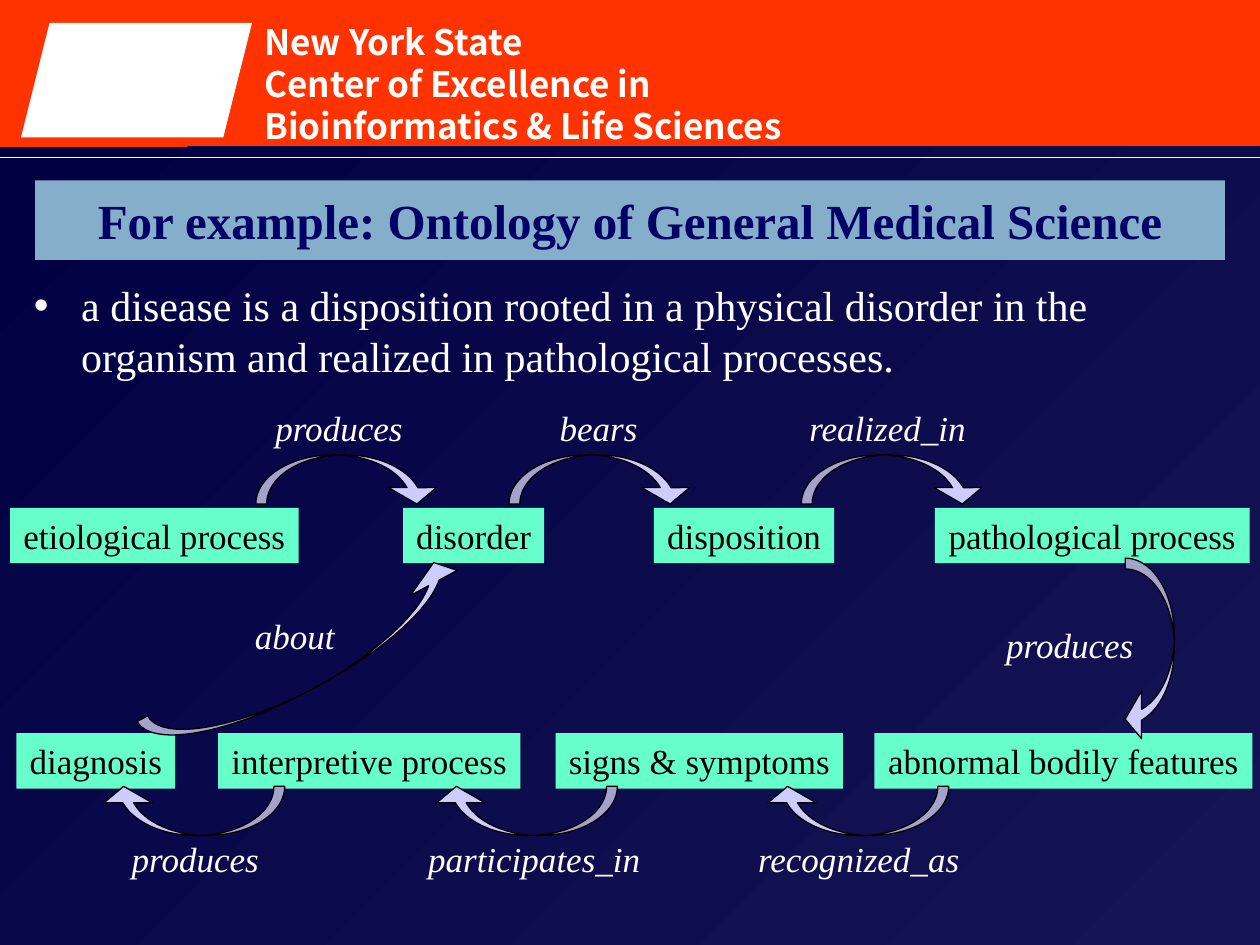
from lxml import etree
from pptx import Presentation
from pptx.dml.color import RGBColor
from pptx.enum import shapes, text
from pptx.oxml import ns
from pptx.util import Pt

RED = RGBColor(0xFF, 0x33, 0x00)
NIGHT = RGBColor(0x00, 0x00, 0x42)
INDIGO = RGBColor(0x15, 0x15, 0x55)
NAVY = RGBColor(0x00, 0x00, 0x66)
STEEL = RGBColor(0x84, 0xAE, 0xCA)
MINT = RGBColor(0x66, 0xFF, 0xCC)
LILAC = RGBColor(0xCC, 0xCC, 0xFF)
WHITE = RGBColor(0xFF, 0xFF, 0xFF)
BLACK = RGBColor(0x00, 0x00, 0x00)
SERIF = "Times New Roman"
SANS = "Noto Sans CJK KR"
KINDS = shapes.MSO_SHAPE
ALIGN = text.PP_ALIGN
ROW_HEIGHT = 31.7
ARROW_SIZE = (105.8, 28.1)


def place(item, box):
    item.left, item.top, item.width, item.height = map(Pt, box)


def write(frame, words, size=20, color=WHITE, font=SERIF, bold=False, italic=False,
          align=ALIGN.CENTER, anchor=text.MSO_ANCHOR.TOP, wrap=False, spacing=None):
    """Fill a text frame, one paragraph for each line of words."""
    frame.text = words
    frame.auto_size = text.MSO_AUTO_SIZE.NONE
    frame.word_wrap = wrap
    frame.vertical_anchor = anchor
    for paragraph in frame.paragraphs:
        paragraph.alignment = align
        if spacing:
            paragraph.line_spacing = Pt(spacing)
        face = paragraph.runs[0].font
        face.name, face.size = font, Pt(size)
        face.bold, face.italic = bold, italic
        face.color.rgb = color


def add_plain(slide, kind, box, fill, line=None):
    plain = slide.shapes.add_shape(kind, *map(Pt, box))
    plain.shadow.inherit = False
    plain.fill.solid()
    plain.fill.fore_color.rgb = fill
    if line is None:
        plain.line.fill.background()
    else:
        plain.line.color.rgb = line
        plain.line.width = Pt(0.75)
    return plain


def add_label(slide, words, box, **style):
    label = slide.shapes.add_textbox(*map(Pt, box))
    write(label.text_frame, words, **style)


def add_backdrop(slide, box):
    """Red page with a dark gradient panel behind everything else."""
    slide.background.fill.solid()
    slide.background.fill.fore_color.rgb = RED
    panel = add_plain(slide, KINDS.RECTANGLE, box, NIGHT)
    panel.fill.gradient()
    panel.fill.gradient_angle = 315
    for stop, color in zip(panel.fill.gradient_stops, (NIGHT, INDIGO)):
        stop.color.rgb = color
    panel.element.getparent().insert(2, panel.element)


def add_header(slide, box):
    left, top, width, height = box
    # Plain emblem, institute name, rule below
    add_plain(slide, KINDS.PARALLELOGRAM, (left + 12, top + 13, 132, 65.5), WHITE)
    add_label(slide, "New York State\nCenter of Excellence in Bioinformatics & Life Sciences",
              (left + 144, top + 8, 330, 80), font=SANS, bold=True,
              align=ALIGN.LEFT, wrap=True, spacing=24)
    rule_y = Pt(top + height)
    rule = slide.shapes.add_connector(shapes.MSO_CONNECTOR.STRAIGHT,
                                      Pt(left), rule_y, Pt(left + width), rule_y)
    rule.line.color.rgb = WHITE
    rule.line.width = Pt(0.75)
    etree.SubElement(rule.element.spPr, ns.qn("a:effectLst"))


def fill_title(slide, box):
    title = slide.shapes.title
    place(title, box)
    title.fill.solid()
    title.fill.fore_color.rgb = STEEL
    write(title.text_frame, "For example: Ontology of General Medical Science", size=28,
          color=NAVY, bold=True, anchor=text.MSO_ANCHOR.MIDDLE, wrap=True)


def fill_definition(slide, box):
    definition = slide.placeholders[1]
    place(definition, box)
    write(definition.text_frame,
          "a disease is a disposition rooted in a physical disorder in the "
          "organism and realized in pathological processes.",
          size=24, align=ALIGN.LEFT, wrap=True)


def add_arrow(slide, box, turn=0, mirrored=False):
    arrow = add_plain(slide, KINDS.CURVED_DOWN_ARROW, box, LILAC, line=BLACK)
    for index, value in enumerate((0.22, 0.978, 0.333)):
        arrow.adjustments[index] = value
    arrow.rotation = turn
    if mirrored:
        arrow.element.spPr.find(ns.qn("a:xfrm")).set("flipH", "1")


def add_entities(slide, top, entities):
    for words, left, width in entities:
        entity = add_plain(slide, KINDS.RECTANGLE, (left, top, width, ROW_HEIGHT), MINT)
        write(entity.text_frame, words, color=BLACK)


def add_relations(slide, arrow_top, label_top, turn, relations):
    """Row of curved arrows, each with its relation name centred on it."""
    for words, left, middle in relations:
        add_label(slide, words, (middle - 70, label_top, 140, ROW_HEIGHT), italic=True)
        add_arrow(slide, (left, arrow_top, *ARROW_SIZE), turn)


def add_diagram(slide, box):
    left, top = box[:2]
    # Upper row: from cause to process
    add_entities(slide, top + 61.2, [
        ("etiological process", left + 5.8, 164.9), ("disorder", left + 230.4, 80.6),
        ("disposition", left + 373.7, 103), ("pathological process", left + 534.2, 180)])
    add_relations(slide, top + 30.9, top, 0, [
        ("produces", left + 146.2, left + 193.7), ("bears", left + 290.9, left + 342),
        ("realized_in", left + 457.9, left + 507.2)])
    # Lower row: from features back to diagnosis
    add_entities(slide, top + 190, [
        ("abnormal bodily features", left + 499.7, 216),
        ("signs & symptoms", left + 317.5, 164.2),
        ("interpretive process", left + 124.6, 172.8), ("diagnosis", left + 9.4, 90.7)])
    add_relations(slide, top + 220.3, top + 246.2, 180, [
        ("produces", left + 56.9, left + 111.6),
        ("participates_in", left + 247, left + 305.3),
        ("recognized_as", left + 436.3, left + 490.7)])
    # Links between the rows
    add_relations(slide, top + 128.8, top + 123.8, 90, [
        ("produces", left + 604.1, left + 611.3)])
    add_label(slide, "about", (left + 138.2, top + 118.8, 60.5, ROW_HEIGHT), italic=True)
    add_arrow(slide, (left + 73.4, top + 132.4, 207.4, 31), 151.8, mirrored=True)


def main():
    deck = Presentation()
    deck.slide_width, deck.slide_height = Pt(720), Pt(540)
    slide = deck.slides.add_slide(deck.slide_layouts[1])
    add_backdrop(slide, (0, 84, 720, 456))
    add_header(slide, (0, 0, 720, 90))
    fill_title(slide, (20, 103, 680, 45.5))
    fill_definition(slide, (12.2, 156.2, 696, 372))
    add_diagram(slide, (0, 229, 720, 280))
    deck.save("out.pptx")


if __name__ == "__main__":
    main()
